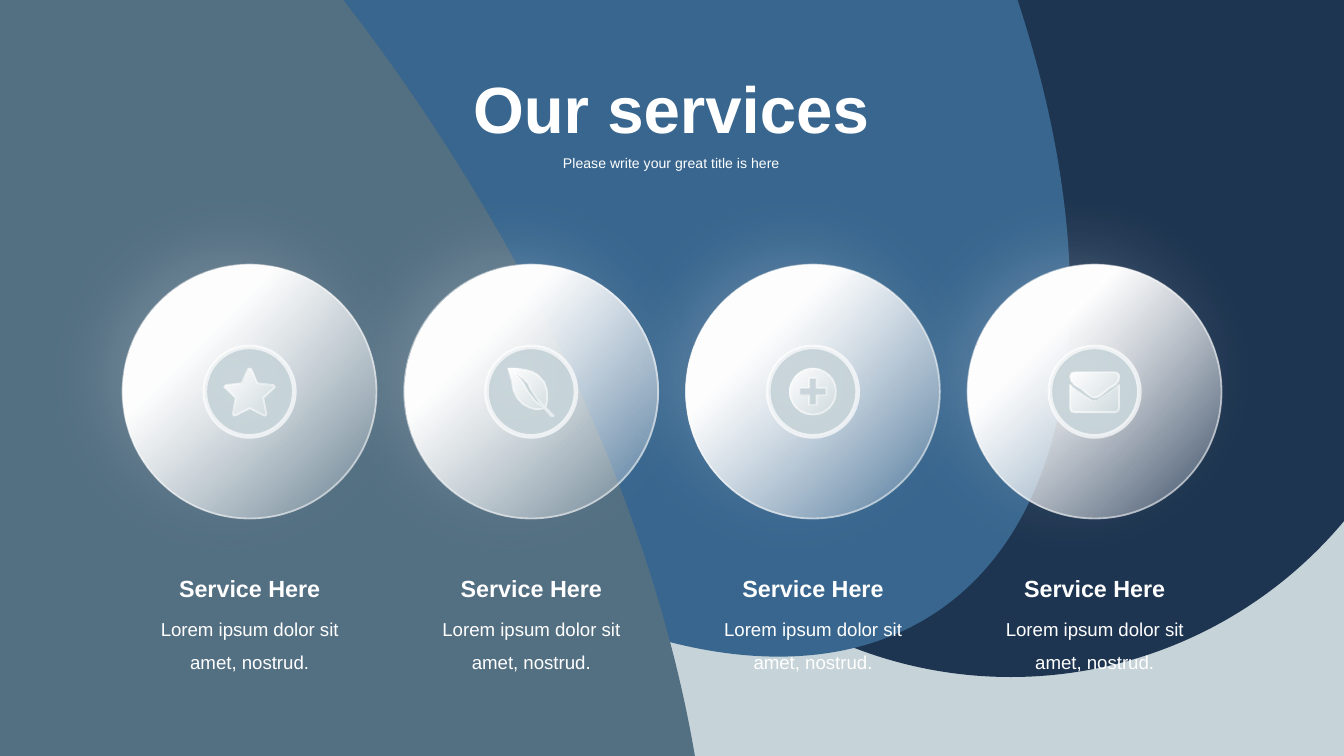
from pptx import Presentation
from pptx.dml.color import RGBColor
from pptx.enum.shapes import MSO_SHAPE as Preset
from pptx.enum.text import MSO_ANCHOR as Anchor, MSO_AUTO_SIZE as AutoSize, PP_ALIGN as Align
from pptx.oxml import parse_xml
from pptx.oxml.ns import nsdecls, qn
from pptx.util import Pt
from math import cos, pi, sin

WHITE, MIST, NAVY, BLUE, STEEL = "FFFFFF", "C6D3D8", "1E3551", "38668E", "536F82"
FIRST_CENTER, CENTER_STEP, CENTER_Y = 133.7, 150.9, 209.8
ICON_UNIT = Pt(0.1)

BACKDROP = [
    (MIST, 516, 364.7, 943.9, 499, 249),
    (NAVY, 541.4, 129.2, 466, 467, 0),
    (BLUE, 237.2, -63, 943.9, 499, 235.8),
    (STEEL, -17.3, 229.3, 594.7, 1125.4, 146.5),
]


def color(value):
    return RGBColor.from_string(value)


def mirrored(half):
    return half + [(-x, y) for x, y in reversed(half)]


def star_icon():
    return [mirrored([(0, -124), (8, -122), (42, -45), (128, -35), (136, -25),
                      (74, 33), (90, 122), (80, 129), (0, 88)])]


def leaf_icon():
    blade = [(-124, -124), (-75, -123), (-30, -116), (5, -106), (35, -88), (68, -52),
             (83, -10), (86, 25), (83, 60), (76, 85), (121, 130), (106, 130), (68, 88),
             (46, 94), (20, 94), (-10, 86), (-46, 66), (-74, 36), (-95, -6), (-104, -56)]
    vein = [(-88, -100), (-46, -50), (-18, 0), (20, 50), (45, 70), (70, 80),
            (35, 43), (0, -8), (-16, -43), (-45, -72)]
    return [blade, vein]


def plus_icon():
    ring = [(123 * cos(pi * i / 30), 123 * sin(pi * i / 30)) for i in range(60)]
    arm = [(-20, -72), (20, -72), (20, -20)]
    cross = []
    for _ in range(4):
        cross += arm
        arm = [(-y, x) for x, y in arm]
    return [ring, cross]


def envelope_icon():
    body = [(0, 50), (15, 49), (46, 28), (80, 6), (118, -22), (131, -36),
            (131, 86), (125, 103), (108, 110)]
    flap = [(108, -104), (125, -97), (131, -80), (125, -58), (108, -38),
            (72, -15), (38, 12), (12, 29), (0, 31)]
    return [mirrored(body), mirrored(flap)]


def add_oval(slide, center_x, center_y, width, height):
    shape = slide.shapes.add_shape(Preset.OVAL, Pt(center_x - width / 2),
                                   Pt(center_y - height / 2), Pt(width), Pt(height))
    shape.shadow.inherit = False
    return shape


def add_backdrop(slide, fill, center_x, center_y, width, height, rotation):
    shape = add_oval(slide, center_x, center_y, width, height)
    shape.rotation = rotation
    shape.fill.solid()
    shape.fill.fore_color.rgb = color(fill)
    shape.line.fill.background()


def add_icon(slide, contours, center_x):
    first, *others = contours
    builder = slide.shapes.build_freeform(*first[0], scale=ICON_UNIT)
    builder.add_line_segments(first[1:])
    for contour in others:
        builder.move_to(*contour[0])
        builder.add_line_segments(contour[1:])
    shape = builder.convert_to_shape(Pt(center_x), Pt(CENTER_Y))
    shape.shadow.inherit = False
    return shape


def set_outline(shape, width, opacity):
    shape.line.width = Pt(width)
    shape.line.color.rgb = color(WHITE)
    tint = shape.element.spPr.find(qn("a:ln")).find(".//" + qn("a:srgbClr"))
    tint.append(parse_xml(f'<a:alpha {nsdecls("a")} val="{opacity * 1000}"/>'))


def set_glow(shape, opacity):
    shape.element.spPr.find(qn("a:effectLst")).append(parse_xml(
        f'<a:outerShdw {nsdecls("a")} blurRad="{Pt(36.5)}" dist="{Pt(11)}" dir="{220 * 60000}" '
        f'algn="ctr" rotWithShape="0"><a:srgbClr val="{WHITE}">'
        f'<a:alpha val="{opacity * 1000}"/></a:srgbClr></a:outerShdw>'))


def set_glass(shape, opaque_stops, glow):
    set_outline(shape, 1, 51)
    stops = "".join(f'<a:gs pos="{stop * 1000}"><a:srgbClr val="{WHITE}"/></a:gs>'
                    for stop in opaque_stops)
    shape.element.spPr.find(qn("a:ln")).addprevious(parse_xml(
        f'<a:gradFill {nsdecls("a")} rotWithShape="1"><a:gsLst><a:gs pos="0">'
        f'<a:srgbClr val="{WHITE}"><a:alpha val="12000"/></a:srgbClr></a:gs>{stops}</a:gsLst>'
        '<a:path path="circle"><a:fillToRect l="100000" t="100000"/></a:path></a:gradFill>'))
    set_glow(shape, glow)


def add_badge(slide, center_x):
    shape = add_oval(slide, center_x, CENTER_Y, 48, 48)
    shape.fill.solid()
    shape.fill.fore_color.rgb = color(MIST)
    set_outline(shape, 2.5, 70)
    set_glow(shape, 17)


def write_text(shape, text, size, bold=False, line_spacing=1.0):
    frame = shape.text_frame
    frame.word_wrap = True
    frame.auto_size = AutoSize.SHAPE_TO_FIT_TEXT
    frame.vertical_anchor = Anchor.TOP
    frame.margin_left = frame.margin_right = Pt(3.6)
    frame.margin_top = frame.margin_bottom = Pt(1.44)
    paragraph = frame.paragraphs[0]
    paragraph.alignment = Align.CENTER
    paragraph.line_spacing = line_spacing
    paragraph.space_before = Pt(0)
    run = paragraph.add_run()
    run.text = text
    run.font.name = "Arial"
    run.font.size = Pt(size)
    run.font.bold = bold
    run.font.color.rgb = color(WHITE)


def fill_placeholder(shape, text, left, top, width, height, **style):
    shape.left, shape.top, shape.width, shape.height = Pt(left), Pt(top), Pt(width), Pt(height)
    write_text(shape, text, **style)
    shape.element.getparent().append(shape.element)


def add_label(slide, text, center_x, top, height, **style):
    width = 109.4
    shape = slide.shapes.add_textbox(Pt(center_x - width / 2), Pt(top), Pt(width), Pt(height))
    write_text(shape, text, **style)


def add_service(slide, center_x, icon):
    set_glass(add_oval(slide, center_x, CENTER_Y, 136, 136), (70, 100), 17)
    add_badge(slide, center_x)
    set_glass(add_icon(slide, icon, center_x), (100,), 56)
    add_label(slide, "Service Here", center_x, 306, 18.7, size=12.5, bold=True)
    add_label(slide, "Lorem ipsum dolor sit amet, nostrud.", center_x, 323.4, 34,
              size=10, line_spacing=1.5)


def main():
    presentation = Presentation()
    presentation.slide_width, presentation.slide_height = Pt(720), Pt(405)
    slide = presentation.slides.add_slide(presentation.slide_layouts[0])
    for ellipse in BACKDROP:
        add_backdrop(slide, *ellipse)
    icons = [star_icon(), leaf_icon(), plus_icon(), envelope_icon()]
    for index, icon in enumerate(icons):
        add_service(slide, FIRST_CENTER + index * CENTER_STEP, icon)
    title, subtitle = list(slide.placeholders)
    fill_placeholder(title, "Our services", 223.9, 35.3, 271.4, 46, size=35, bold=True)
    fill_placeholder(subtitle, "Please write your great title is here",
                     239, 81.4, 241.2, 13, size=7.5)
    presentation.save("out.pptx")


if __name__ == "__main__":
    main()
